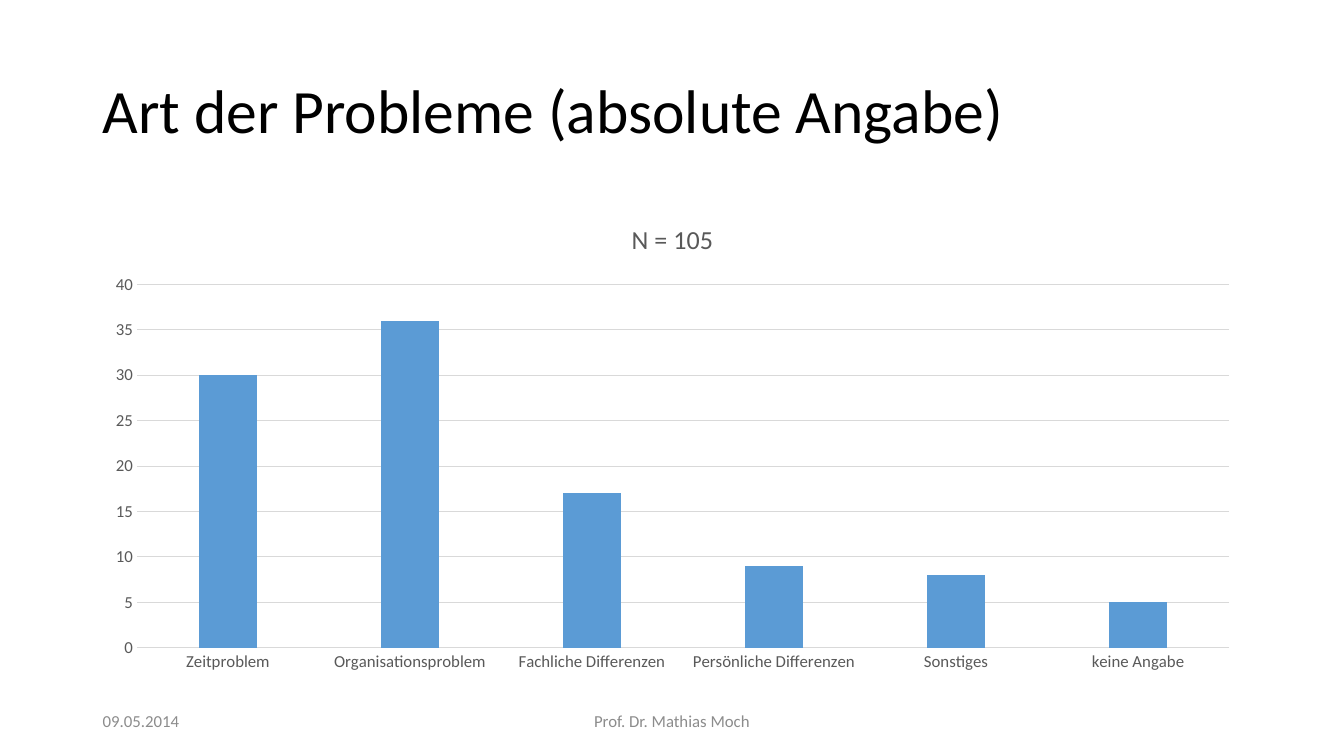
import pptx
import pptx.util
import pptx.chart.data
import pptx.dml.color
import pptx.enum.chart
import pptx.enum.text

Pt, Inches = pptx.util.Pt, pptx.util.Inches
Align = pptx.enum.text.PP_ALIGN
Tick = pptx.enum.chart.XL_TICK_MARK

WIDE, HIGH = 13.33, 7.5
EDGE = 0.92
FULL = 11.5
FOOT = 6.95
FONT = "Calibri"
COLORS = {"ink": "000000", "label": "595959", "foot": "8C8C8C",
          "grid": "D9D9D9", "bar": "5B9BD5"}

# text, left, top, width, height, size, colour, alignment, line spacing
TEXTS = [
    ("Art der Probleme (absolute Angabe)", EDGE, 0.4, FULL, 1.45, 44, "ink", Align.LEFT, 0.9),
    ("09.05.2014", EDGE, FOOT, 3, 0.4, 12, "foot", Align.LEFT, 1.0),
    ("Prof. Dr. Mathias Moch", (WIDE - 4.5) / 2, FOOT, 4.5, 0.4, 12, "foot", Align.CENTER, 1.0),
]
HEAD = "N = 105"
COUNTS = {
    "Zeitproblem": 30,
    "Organisationsproblem": 36,
    "Fachliche Differenzen": 17,
    "Persönliche Differenzen": 9,
    "Sonstiges": 8,
    "keine Angabe": 5,
}


def tint(name):
    return pptx.dml.color.RGBColor.from_string(COLORS[name])


def style(font, size, color):
    font.name, font.size, font.bold = FONT, Pt(size), False
    font.color.rgb = tint(color)


def rule(line):
    line.color.rgb = tint("grid")
    line.width = Pt(0.75)


def add_text(slide, text, left, top, width, height, size, color, align, lead):
    box = slide.shapes.add_textbox(*map(Inches, (left, top, width, height)))
    frame = box.text_frame
    frame.word_wrap = True
    frame.vertical_anchor = pptx.enum.text.MSO_ANCHOR.MIDDLE
    para = frame.paragraphs[0]
    para.alignment, para.line_spacing = align, lead
    run = para.add_run()
    run.text = text
    style(run.font, size, color)


def add_bars(slide):
    data = pptx.chart.data.CategoryChartData()
    data.categories = list(COUNTS)
    data.add_series("Series 1", list(COUNTS.values()))
    kind = pptx.enum.chart.XL_CHART_TYPE.COLUMN_CLUSTERED
    chart = slide.shapes.add_chart(kind, *map(Inches, (EDGE, 2, FULL, 4.76)), data).chart
    style(chart.font, 10, "ink")
    chart.has_legend = False

    run = chart.chart_title.text_frame.paragraphs[0].add_run()
    run.text = HEAD
    style(run.font, 18.6, "label")
    chart.chart_title.include_in_layout = False

    plot = chart.plots[0]
    plot.gap_width, plot.overlap = 219, -27
    plot.vary_by_categories = False
    fill = plot.series[0].format.fill
    fill.solid()
    fill.fore_color.rgb = tint("bar")

    cats, vals = chart.category_axis, chart.value_axis
    for axis in (cats, vals):
        axis.major_tick_mark = axis.minor_tick_mark = Tick.NONE
        style(axis.tick_labels.font, 12, "label")
    rule(cats.format.line)
    vals.format.line.fill.background()
    vals.has_major_gridlines = True
    rule(vals.major_gridlines.format.line)
    vals.minimum_scale, vals.maximum_scale, vals.major_unit = 0, 40, 5


def main():
    deck = pptx.Presentation()
    deck.slide_width, deck.slide_height = Inches(WIDE), Inches(HIGH)
    slide = deck.slides.add_slide(deck.slide_layouts[6])
    for item in TEXTS:
        add_text(slide, *item)
    add_bars(slide)
    deck.save("out.pptx")


if __name__ == "__main__":
    main()
